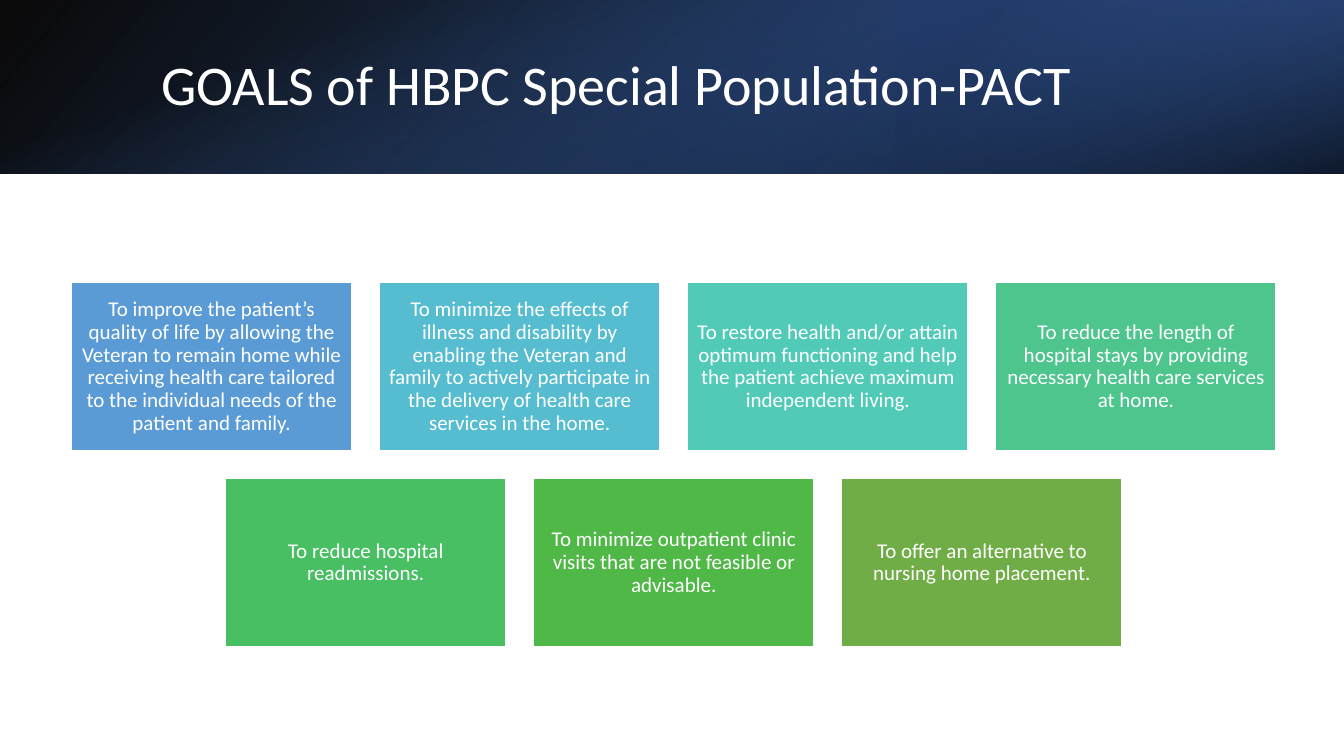
from lxml import etree
from pptx import Presentation
from pptx import util as u
from pptx.dml.color import RGBColor
from pptx.enum import shapes, text
from pptx.oxml.ns import qn

HUES = {
    "white": "FFFFFF", "black": "000000", "navy": "203864",
    "deep": "2F5597", "royal": "4472C4", "blue": "5B9BD5",
    "sky": "56BCD0", "teal": "52CAB8", "mint": "4DC58D",
    "green": "49BF64", "leaf": "50B846", "olive": "70AD47",
}
FONT = "Calibri"
GOALS = [
    [("blue", "To improve the patient’s quality of life by allowing the Veteran "
              "to remain home while receiving health care tailored to the "
              "individual needs of the patient and family."),
     ("sky", "To minimize the effects of illness and disability by enabling the "
             "Veteran and family to actively participate in the delivery of "
             "health care services in the home."),
     ("teal", "To restore health and/or attain optimum functioning and help the "
              "patient achieve maximum independent living."),
     ("mint", "To reduce the length of hospital stays by providing necessary "
              "health care services at home.")],
    [("green", "To reduce hospital readmissions."),
     ("leaf", "To minimize outpatient clinic visits that are not feasible or "
              "advisable."),
     ("olive", "To offer an alternative to nursing home placement.")],
]


def hue(name):
    """Return the named colour."""
    return RGBColor.from_string(HUES[name])


def write(shape, words, size=15, align=text.PP_ALIGN.CENTER, pad=0.15):
    """Put formatted words, centred in height, into a shape."""
    frame = shape.text_frame
    frame.word_wrap = True
    frame.vertical_anchor = text.MSO_ANCHOR.MIDDLE
    frame.margin_left = frame.margin_right = u.Cm(pad)
    frame.margin_top = frame.margin_bottom = u.Cm(0.15)
    para = frame.paragraphs[0]
    para.text = words
    para.alignment = align
    para.line_spacing = 0.9
    para.font.size = u.Pt(size)
    para.font.name = FONT
    para.font.color.rgb = hue("white")


def block(slide, left, top, wide, high):
    """Add a flat rectangle, measured in centimetres."""
    rect = slide.shapes.add_shape(
        shapes.MSO_SHAPE.RECTANGLE, *map(u.Cm, (left, top, wide, high)))
    rect.shadow.inherit = False
    return rect


def shade(slide, box, stops, angle, turn=0, flip=False):
    """Cover a box with a gradient whose stops are (place, colour, opacity)."""
    left, top, wide, high = box
    if turn == 90:
        left, top = left + (wide - high) / 2, top + (high - wide) / 2
        wide, high = high, wide
    rect = block(slide, left, top, wide, high)
    rect.rotation = turn
    rect.line.fill.background()
    if flip:
        rect._element.spPr.find(qn("a:xfrm")).set("flipH", "1")
    rect.fill.gradient()
    rect.fill.gradient_angle = 360 - angle
    for stop, (place, name, _) in zip(rect.fill.gradient_stops, stops):
        stop.position = place / 100
        stop.color.rgb = hue(name)
    tints = rect._element.spPr.iter(qn("a:srgbClr"))
    for tint, (_, _, solid) in zip(list(tints), stops):
        etree.SubElement(tint, qn("a:alpha")).set("val", str(solid * 1000))


def banner(slide, left, top, wide, high):
    """Draw the layered dark band and its title."""
    full = (left, top, wide, high)
    third = (left + wide * 2 / 3, top, wide / 3, high)
    shade(slide, full, [(0, "black", 96), (100, "deep", 100)], 140, flip=True)
    shade(slide, third, [(19, "navy", 68), (100, "royal", 79)], 320,
          turn=180, flip=True)
    shade(slide, full, [(23, "royal", 0), (99, "black", 74)], 340, turn=90)
    title = slide.shapes.add_textbox(
        u.Cm(left + 3.81), u.Cm(top + 0.97), u.Cm(27.89), u.Cm(2.44))
    write(title, "GOALS of HBPC Special Population-PACT", size=40,
          align=text.PP_ALIGN.LEFT, pad=0.25)


def cards(slide, left, top, wide, high, gap=0.7):
    """Lay the goals out in centred rows of equal cards."""
    most = max(map(len, GOALS))
    across = (wide - gap * (most - 1)) / most
    tall = (high - gap * (len(GOALS) - 1)) / len(GOALS)
    for row, goals in enumerate(GOALS):
        start = left + (most - len(goals)) * (across + gap) / 2
        for col, (name, words) in enumerate(goals):
            card = block(slide, start + col * (across + gap),
                         top + row * (tall + gap), across, tall)
            card.fill.solid()
            card.fill.fore_color.rgb = hue(name)
            card.line.color.rgb = hue("white")
            card.line.width = u.Pt(1)
            write(card, words)


def main():
    """Build and save the slide."""
    deck = Presentation()
    deck.slide_width, deck.slide_height = u.Cm(33.87), u.Cm(19.05)
    slide = deck.slides.add_slide(deck.slide_layouts[6])
    banner(slide, 0, 0, 33.87, 4.38)
    cards(slide, 1.8, 7.12, 30.36, 9.18)
    deck.save("out.pptx")


if __name__ == "__main__":
    main()
